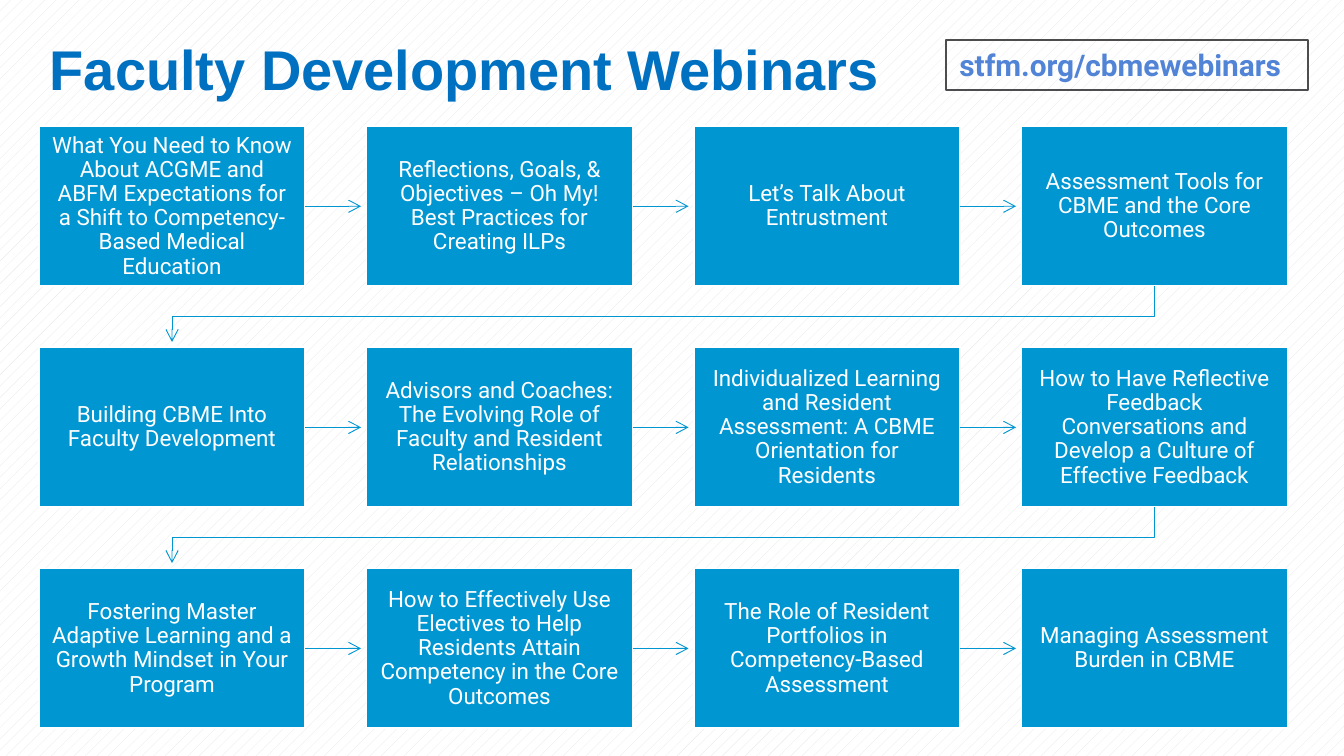
from lxml import etree
from pptx import Presentation
from pptx import util as u
from pptx.dml.color import RGBColor
from pptx.enum import dml, shapes, text
from pptx.oxml.ns import qn

BLUE = RGBColor(0x00, 0x96, 0xD2)
TITLE_BLUE = RGBColor(0x00, 0x70, 0xC0)
LINK_BLUE = RGBColor(0x51, 0x84, 0xD6)
WHITE = RGBColor(0xFF, 0xFF, 0xFF)
PALE_GRAY = RGBColor(0xE7, 0xE6, 0xE6)
DARK_GRAY = RGBColor(0x4D, 0x4D, 0x4F)

# Slide (16:9) and grid, in inches
WIDTH = 10
HEIGHT = WIDTH * 9 / 16
COLS, ROWS = 4, 3
LEFT, TOP = 0.29, 0.94
LAST_LEFT, LAST_TOP = 7.6, 4.23
BOX_W, BOX_H = 1.98, 1.19
COL_STEP = (LAST_LEFT - LEFT) / (COLS - 1)
ROW_STEP = (LAST_TOP - TOP) / (ROWS - 1)
ARROW_GAP = 0.04

WEBINARS = [
    "What You Need to Know About ACGME and ABFM Expectations for a Shift to "
    "Competency-Based Medical Education",
    "Reflections, Goals, & Objectives – Oh My! Best Practices for Creating ILPs",
    "Let’s Talk About Entrustment",
    "Assessment Tools for CBME and the Core Outcomes",
    "Building CBME Into Faculty Development",
    "Advisors and Coaches: The Evolving Role of Faculty and Resident Relationships",
    "Individualized Learning and Resident Assessment: A CBME Orientation for Residents",
    "How to Have Reflective Feedback Conversations and Develop a Culture of "
    "Effective Feedback",
    "Fostering Master Adaptive Learning and a Growth Mindset in Your Program",
    "How to Effectively Use Electives to Help Residents Attain Competency in the "
    "Core Outcomes",
    "The Role of Resident Portfolios in Competency-Based Assessment",
    "Managing Assessment Burden in CBME",
]


def set_text(sp, words, size, font, color, align, bold=False):
    tf = sp.text_frame
    tf.text = words
    tf.word_wrap = True
    p = tf.paragraphs[0]
    p.alignment = align
    f = p.runs[0].font
    f.size, f.name, f.bold = u.Pt(size), font, bold
    f.color.rgb = color
    return tf


def add_rect(s, x, y, w, h):
    sp = s.shapes.add_shape(shapes.MSO_SHAPE.RECTANGLE, *map(u.Inches, (x, y, w, h)))
    sp.shadow.inherit = False
    return sp


def add_background(s):
    sp = add_rect(s, 0, 0, WIDTH, HEIGHT)
    sp.fill.patterned()
    sp.fill.pattern = dml.MSO_PATTERN.PERCENT_20
    sp.fill.fore_color.rgb = PALE_GRAY
    sp.fill.back_color.rgb = WHITE
    sp.line.fill.background()
    s.shapes.title._element.addprevious(sp._element)


def add_title(s):
    sp = s.shapes.title
    sp.left, sp.top, sp.width, sp.height = map(u.Inches, (0.27, 0.24, 8.87, 0.6))
    tf = set_text(sp, "Faculty Development Webinars", 30, "Arial", TITLE_BLUE,
                  text.PP_ALIGN.LEFT, True)
    tf.auto_size = text.MSO_AUTO_SIZE.NONE
    tf.vertical_anchor = text.MSO_ANCHOR.MIDDLE
    tf.paragraphs[0].line_spacing = 0.9


def add_link_box(s):
    sp = add_rect(s, 7.04, 0.3, 2.69, 0.37)
    sp.fill.background()
    sp.line.color.rgb = DARK_GRAY
    sp.line.width = u.Pt(1)
    tf = set_text(sp, "stfm.org/cbmewebinars", 16, "Roboto", LINK_BLUE,
                  text.PP_ALIGN.LEFT, True)
    tf.vertical_anchor = text.MSO_ANCHOR.TOP


def add_webinar(s, x, y, words):
    sp = add_rect(s, x, y, BOX_W, BOX_H)
    sp.fill.solid()
    sp.fill.fore_color.rgb = BLUE
    sp.line.color.rgb = WHITE
    sp.line.width = u.Pt(1)
    tf = set_text(sp, words, 12, "Roboto", WHITE, text.PP_ALIGN.CENTER)
    tf.vertical_anchor = text.MSO_ANCHOR.MIDDLE
    tf.margin_left = tf.margin_right = tf.margin_top = tf.margin_bottom = u.Inches(0.09)
    tf.paragraphs[0].line_spacing = 0.9
    return sp


def style_arrow(sp):
    sp.line.color.rgb = BLUE
    sp.line.width = u.Pt(0.5)
    etree.SubElement(sp.line._get_or_add_ln(), qn("a:tailEnd"), type="arrow")


def add_arrow_right(s, box, x, y):
    """Straight arrow from a box at x, y to just before the next column."""
    mid = u.Inches(y + BOX_H / 2)
    c = s.shapes.add_connector(shapes.MSO_CONNECTOR.STRAIGHT, u.Inches(x + BOX_W), mid,
                               u.Inches(x + COL_STEP - ARROW_GAP), mid)
    c.begin_connect(box, 3)
    style_arrow(c)
    etree.SubElement(c._element.spPr, qn("a:effectLst"))


def add_arrow_to_next_row(s, x, y):
    """Bent arrow from the last box of a row to the first box of the next."""
    start, end = x + BOX_W / 2, LEFT + BOX_W / 2
    bottom, next_top = y + BOX_H, y + ROW_STEP
    turn = (bottom + next_top) / 2
    fb = s.shapes.build_freeform(u.Inches(start), u.Inches(bottom))
    points = [(start, turn), (end, turn), (end, next_top - ARROW_GAP)]
    fb.add_line_segments([(u.Inches(px), u.Inches(py)) for px, py in points], close=False)
    sp = fb.convert_to_shape()
    sp.fill.background()
    sp.shadow.inherit = False
    style_arrow(sp)


def main():
    prs = Presentation()
    prs.slide_width, prs.slide_height = u.Inches(WIDTH), u.Inches(HEIGHT)
    s = prs.slides.add_slide(prs.slide_layouts[5])

    add_background(s)
    add_title(s)

    # Webinars row by row, each followed by its arrow
    for i, words in enumerate(WEBINARS):
        row, col = divmod(i, COLS)
        x, y = LEFT + col * COL_STEP, TOP + row * ROW_STEP
        box = add_webinar(s, x, y, words)
        if col < COLS - 1:
            add_arrow_right(s, box, x, y)
        elif i < len(WEBINARS) - 1:
            add_arrow_to_next_row(s, x, y)

    add_link_box(s)
    prs.save("out.pptx")


if __name__ == "__main__":
    main()
